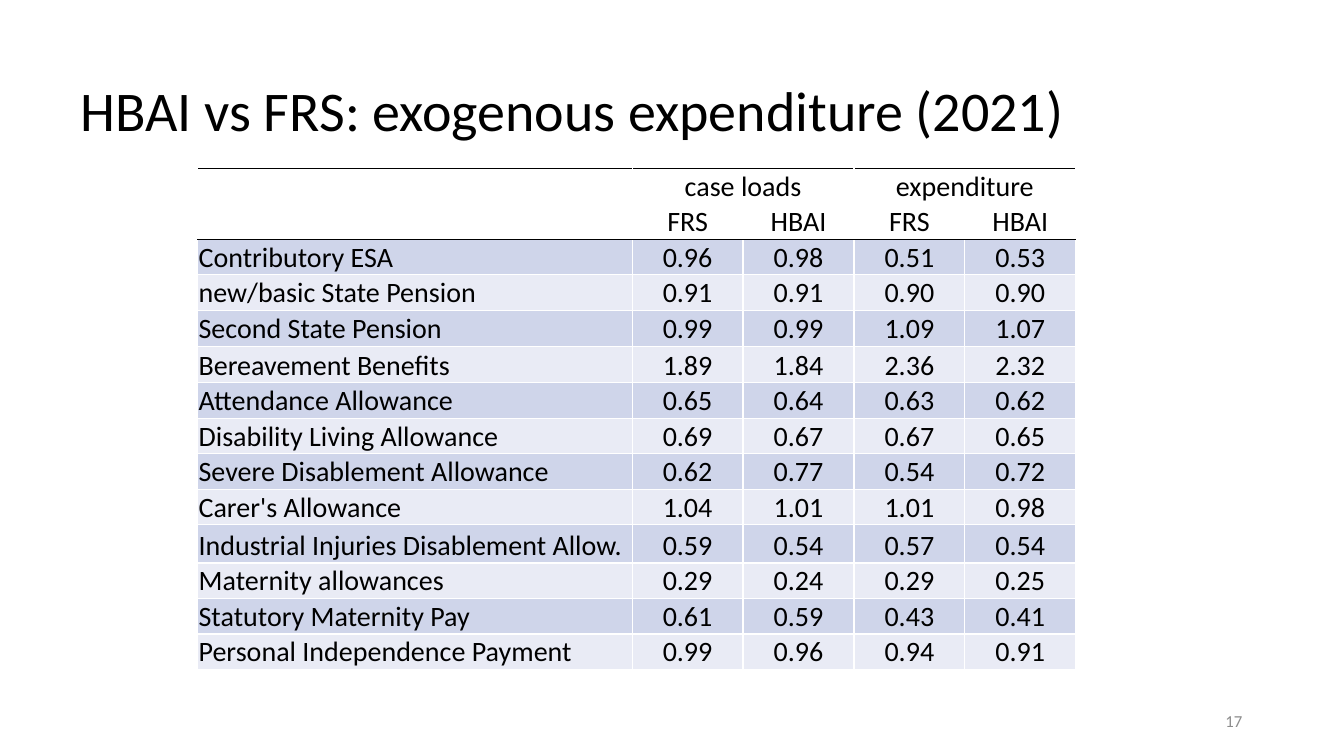
from dataclasses import dataclass
from lxml import etree
from pptx import Presentation
from pptx.dml.color import RGBColor
from pptx.enum.text import MSO_ANCHOR, MSO_AUTO_SIZE, PP_ALIGN
from pptx.oxml.ns import qn
from pptx.util import Inches, Pt

LEFT, MID, RIGHT = PP_ALIGN.LEFT, PP_ALIGN.CENTER, PP_ALIGN.RIGHT
CENTRE, BOTTOM = MSO_ANCHOR.MIDDLE, MSO_ANCHOR.BOTTOM
NO_FIT = MSO_AUTO_SIZE.NONE


@dataclass
class Theme:
    face: str = "Calibri"
    ink: str = "000000"
    grey: str = "8C8C8C"
    rule: str = "FFFFFF"
    bands: tuple = ("CFD5EA", "E9EBF5")
    head: int = 40
    body: int = 20
    note: int = 12


theme = Theme()
UNIT = Inches(0.1)


def grid(*counts):
    return [round(count * UNIT) for count in counts]


def style(para, size, color, align):
    para.alignment = align
    para.font.name = theme.face
    para.font.size = Pt(size)
    para.font.color.rgb = RGBColor.from_string(color)


deck = Presentation()
deck.slide_width, deck.slide_height = grid(133.3, 75)
slide = deck.slides.add_slide(deck.slide_layouts[5])

title = slide.shapes.title
title.left, title.top, title.width, title.height = grid(7, 4, 115, 14.5)
title.text_frame.text = "HBAI vs FRS: exogenous expenditure (2021)"
title.text_frame.auto_size = NO_FIT
title.text_frame.vertical_anchor = CENTRE
title.text_frame.paragraphs[0].line_spacing = 0.9
style(title.text_frame.paragraphs[0], theme.head, theme.ink, LEFT)

number = slide.shapes.add_textbox(*grid(119.3, 69.5, 4.9, 4)).text_frame
number.text = "17"
number.word_wrap = True
number.vertical_anchor = CENTRE
style(number.paragraphs[0], theme.note, theme.grey, RIGHT)

heads = [
    ("", "case loads", "", "expenditure", ""),
    ("", "FRS", "HBAI", "FRS", "HBAI"),
]
items = [
    ("Contributory ESA", 0.96, 0.98, 0.51, 0.53),
    ("new/basic State Pension", 0.91, 0.91, 0.90, 0.90),
    ("Second State Pension", 0.99, 0.99, 1.09, 1.07),
    ("Bereavement Benefits", 1.89, 1.84, 2.36, 2.32),
    ("Attendance Allowance", 0.65, 0.64, 0.63, 0.62),
    ("Disability Living Allowance", 0.69, 0.67, 0.67, 0.65),
    ("Severe Disablement Allowance", 0.62, 0.77, 0.54, 0.72),
    ("Carer's Allowance", 1.04, 1.01, 1.01, 0.98),
    ("Industrial Injuries Disablement Allow.", 0.59, 0.54, 0.57, 0.54),
    ("Maternity allowances", 0.29, 0.24, 0.29, 0.25),
    ("Statutory Maternity Pay", 0.61, 0.59, 0.43, 0.41),
    ("Personal Independence Payment", 0.99, 0.96, 0.94, 0.91),
]
rows = heads + [(name, *(f"{ratio:.2f}" for ratio in ratios)) for name, *ratios in items]
widths = grid(43.1, 11, 11, 11, 11)
tall = {4: 3.6, 5: 3.6, 10: 3.8}
heights = grid(*(tall.get(r, 3.52) for r in range(len(rows))))

table = slide.shapes.add_table(
    len(rows), len(widths), *grid(19.6, 16.7), sum(widths), sum(heights)
).table
table.first_row = False
table.horz_banding = False
for column, width in zip(table.columns, widths):
    column.width = width
for row, height in zip(table.rows, heights):
    row.height = height

dark = {(0, "T"), (1, "B"), (2, "T")}
for r, texts in enumerate(rows):
    for c, text in enumerate(texts):
        cell = table.cell(r, c)
        cell.text = text
        cell.vertical_anchor = BOTTOM
        cell.margin_left = cell.margin_right = cell.margin_top = Inches(0.01)
        cell.margin_bottom = 0
        style(cell.text_frame.paragraphs[0], theme.body, theme.ink, MID if c else LEFT)
        props = cell._tc.get_or_add_tcPr()
        for side in "LRTB":
            line = etree.SubElement(props, qn(f"a:ln{side}"), w=str(Pt(1)))
            paint = etree.SubElement(line, qn("a:solidFill"))
            color = theme.ink if (r, side) in dark else theme.rule
            etree.SubElement(paint, qn("a:srgbClr"), val=color)
        if r < len(heads):
            cell.fill.background()
        else:
            cell.fill.solid()
            cell.fill.fore_color.rgb = RGBColor.from_string(theme.bands[r % 2])

for c in (1, 3):
    table.cell(0, c).merge(table.cell(0, c + 1))

deck.save("out.pptx")
